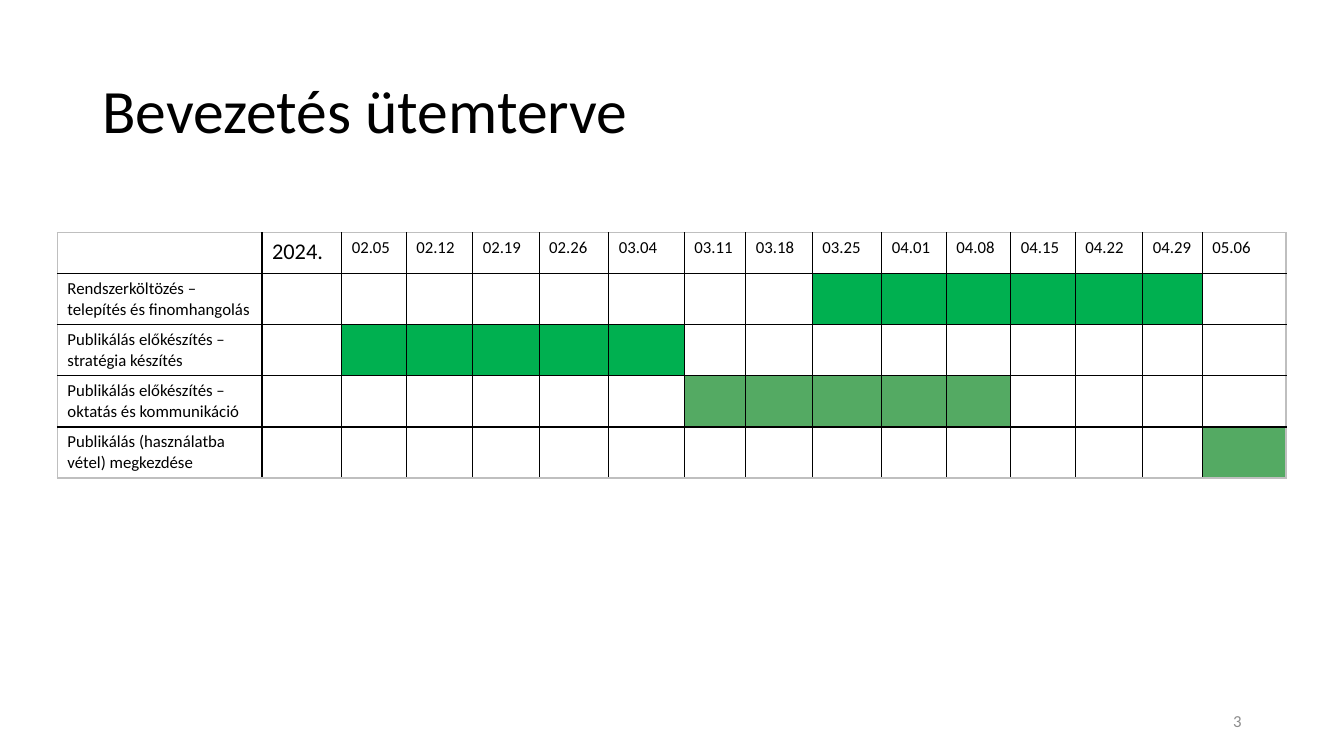
from dataclasses import dataclass

from lxml.etree import SubElement
from pptx import Presentation
from pptx.dml.color import RGBColor
from pptx.enum.text import MSO_ANCHOR, PP_ALIGN
from pptx.oxml.ns import qn
from pptx.util import Pt


@dataclass(frozen=True)
class Theme:
    font: str = "Calibri"
    ink: str = "000000"
    muted: str = "8C8C8C"
    frame: str = "BFBFBF"
    green: str = "00B050"
    sage: str = "54AA63"
    title: int = 44
    year: int = 16
    body: int = 12


THEME = Theme()
WEEKS = ["02.05", "02.12", "02.19", "02.26", "03.04", "03.11", "03.18",
         "03.25", "04.01", "04.08", "04.15", "04.22", "04.29", "05.06"]
WIDTHS = [146.2, 56.9, 46.1, 47.5, 47.5, 49.7, 54, 43.9,
          47.5, 49.7, 46.1, 46.1, 46.1, 48.2, 42.5, 59.8]
HEAD, ROW = 29.2, 36.5
# Task, first week, last week, bar colour
TASKS = [
    ("Rendszerköltözés – telepítés és finomhangolás", "03.25", "04.29", THEME.green),
    ("Publikálás előkészítés – stratégia készítés", "02.05", "03.04", THEME.green),
    ("Publikálás előkészítés – oktatás és kommunikáció", "03.11", "04.08", THEME.sage),
    ("Publikálás (használatba vétel) megkezdése", "05.06", "05.06", THEME.sage),
]


class Painter:
    def __init__(self, slide, theme):
        self.slide = slide
        self.theme = theme

    def style(self, para, size, color):
        para.font.name = self.theme.font
        para.font.size = Pt(size)
        para.font.color.rgb = RGBColor.from_string(color)

    def text(self, box, words, size, color, align=PP_ALIGN.LEFT, spacing=1.0):
        frame = self.slide.shapes.add_textbox(*map(Pt, box)).text_frame
        frame.word_wrap = True
        frame.vertical_anchor = MSO_ANCHOR.MIDDLE
        para = frame.paragraphs[0]
        para.text = words
        para.alignment = align
        para.line_spacing = spacing
        self.style(para, size, color)

    def border(self, cell, outer):
        """Draw all four sides, with the frame colour on the outer ones."""
        props = cell._tc.get_or_add_tcPr()
        for side in "LRTB":
            line = SubElement(props, qn(f"a:ln{side}"), w=str(Pt(1)))
            fill = SubElement(line, qn("a:solidFill"))
            color = self.theme.frame if side in outer else self.theme.ink
            SubElement(fill, qn("a:srgbClr"), val=color)

    def cell(self, cell, words, size, fill, outer):
        self.border(cell, outer)
        if fill:
            cell.fill.solid()
            cell.fill.fore_color.rgb = RGBColor.from_string(fill)
        else:
            cell.fill.background()
        cell.text = words
        self.style(cell.text_frame.paragraphs[0], size, self.theme.ink)

    def gantt(self, left, top, weeks, tasks):
        rows, cols = len(tasks) + 1, len(weeks) + 2
        heights = [HEAD] + [ROW] * len(tasks)
        table = self.slide.shapes.add_table(
            rows, cols, Pt(left), Pt(top), Pt(sum(WIDTHS)), Pt(sum(heights))).table
        table.first_row = table.horz_banding = False
        for col, width in zip(table.columns, WIDTHS):
            col.width = Pt(width)
        for row, height in zip(table.rows, heights):
            row.height = Pt(height)

        grid = [[(words, None) for words in ["", "2024.", *weeks]]]
        for name, start, end, color in tasks:
            bars = [("", color if start <= week <= end else None) for week in weeks]
            grid.append([(name, None), ("", None), *bars])

        for r, line in enumerate(grid):
            for c, (words, fill) in enumerate(line):
                edges = {"L": c == 0, "R": c == cols - 1,
                         "T": r == 0, "B": r == rows - 1}
                outer = [side for side, edge in edges.items() if edge]
                size = self.theme.year if (r, c) == (0, 1) else self.theme.body
                self.cell(table.cell(r, c), words, size, fill, outer)


def main():
    deck = Presentation()
    deck.slide_width, deck.slide_height = Pt(960), Pt(540)
    slide = deck.slides.add_slide(deck.slide_layouts[6])
    paint = Painter(slide, THEME)
    paint.text((66, 28.8, 828, 104.4), "Bevezetés ütemterve",
               THEME.title, THEME.ink, spacing=0.9)
    paint.text((678, 500.5, 216, 28.8), "3",
               THEME.body, THEME.muted, PP_ALIGN.RIGHT)
    paint.gantt(41, 166.3, WEEKS, TASKS)
    deck.save("out.pptx")


if __name__ == "__main__":
    main()
